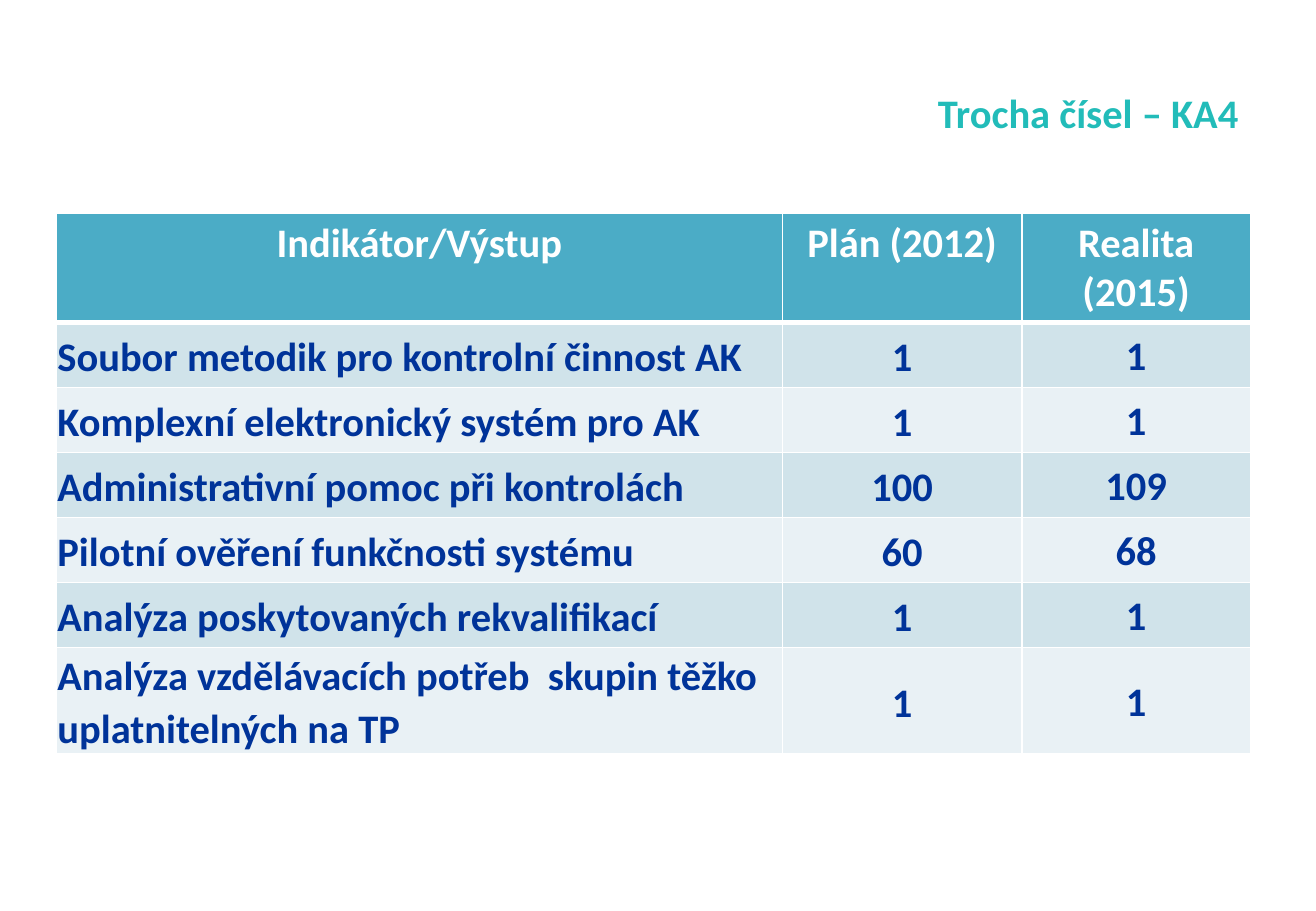
from lxml.etree import SubElement
from pptx import Presentation
from pptx.dml.color import RGBColor
from pptx.enum.text import MSO_ANCHOR as Anchor, PP_ALIGN as Align
from pptx.oxml.ns import qn
from pptx.util import Cm, Pt

COLORS = {
    "title": "22BCB9",
    "header": "4BACC6",
    "band_dark": "D0E3EA",
    "band_light": "E9F1F5",
    "body": "003399",
    "white": "FFFFFF",
}
HEADER = ("Indikátor/Výstup", "Plán (2012)", "Realita (2015)")
INDICATORS = [
    ("Soubor metodik pro kontrolní činnost AK", "1", "1"),
    ("Komplexní elektronický systém pro AK", "1", "1"),
    ("Administrativní pomoc při kontrolách", "100", "109"),
    ("Pilotní ověření funkčnosti systému", "60", "68"),
    ("Analýza poskytovaných rekvalifikací", "1", "1"),
    ("Analýza vzdělávacích potřeb  skupin těžko uplatnitelných na TP", "1", "1"),
]
COL_WIDTHS = (15.19, 5.0, 4.78)
ROW_HEIGHTS = [2.29] + [1.36] * 5 + [2.23]


class SlideBuilder:
    def __init__(self, slide, font="Calibri", size=24):
        self.s, self.font, self.size = slide, font, size

    def add_text(self, tf, text, color, align, spacing=None):
        p = tf.paragraphs[0]
        p.alignment = align
        if spacing:
            p.line_spacing = spacing
        r = p.add_run()
        r.text = text
        r.font.name, r.font.size, r.font.bold = self.font, Pt(self.size), True
        r.font.color.rgb = RGBColor.from_string(COLORS[color])

    def title(self, text, left, top, width, height):
        sp = self.s.shapes.add_textbox(Cm(left), Cm(top), Cm(width), Cm(height))
        tf = sp.text_frame
        tf.word_wrap = True
        tf.vertical_anchor = Anchor.MIDDLE
        self.add_text(tf, text, "title", Align.RIGHT)

    def borders(self, cell, **widths):
        tc_pr = cell._tc.get_or_add_tcPr()
        for side in ("L", "R", "T", "B"):
            ln = SubElement(tc_pr, qn(f"a:ln{side}"), w=str(Pt(widths.get(side, 1))))
            fill = SubElement(ln, qn("a:solidFill"))
            SubElement(fill, qn("a:srgbClr"), val=COLORS["white"])

    def cell(self, cell, text, row, col):
        is_header = row == 0
        # The rule under the header is thicker and shared with the first body row
        thick = {0: {"B": 3}, 1: {"T": 3}}.get(row, {})
        self.borders(cell, **thick)
        band = "header" if is_header else "band_dark" if row % 2 else "band_light"
        cell.fill.solid()
        cell.fill.fore_color.rgb = RGBColor.from_string(COLORS[band])
        if is_header:
            self.add_text(cell.text_frame, text, "white", Align.CENTER)
            return
        cell.vertical_anchor = Anchor.MIDDLE
        if col < 2:
            cell.margin_left = cell.margin_right = cell.margin_top = Cm(0.03)
            cell.margin_bottom = Cm(0)
        align = Align.CENTER if col else Align.LEFT
        self.add_text(cell.text_frame, text, "body", align, 1.07)

    def table(self, rows, left, top, col_widths, row_heights):
        sp = self.s.shapes.add_table(
            len(rows), len(col_widths), Cm(left), Cm(top),
            Cm(sum(col_widths)), Cm(sum(row_heights)))
        table = sp.table
        for column, width in zip(table.columns, col_widths):
            column.width = Cm(width)
        for row, height in zip(table.rows, row_heights):
            row.height = Cm(height)
        for i, values in enumerate(rows):
            for j, text in enumerate(values):
                self.cell(table.cell(i, j), text, i, j)


def main():
    prs = Presentation()
    prs.slide_width, prs.slide_height = Cm(27.51), Cm(19.05)
    builder = SlideBuilder(prs.slides.add_slide(prs.slide_layouts[6]))

    # Title
    builder.title("Trocha čísel – KA4", 1.37, 0.76, 24.77, 3.18)

    # Planned and achieved indicators
    builder.table([HEADER] + INDICATORS, 1.17, 4.45, COL_WIDTHS, ROW_HEIGHTS)

    prs.save("out.pptx")


if __name__ == "__main__":
    main()
